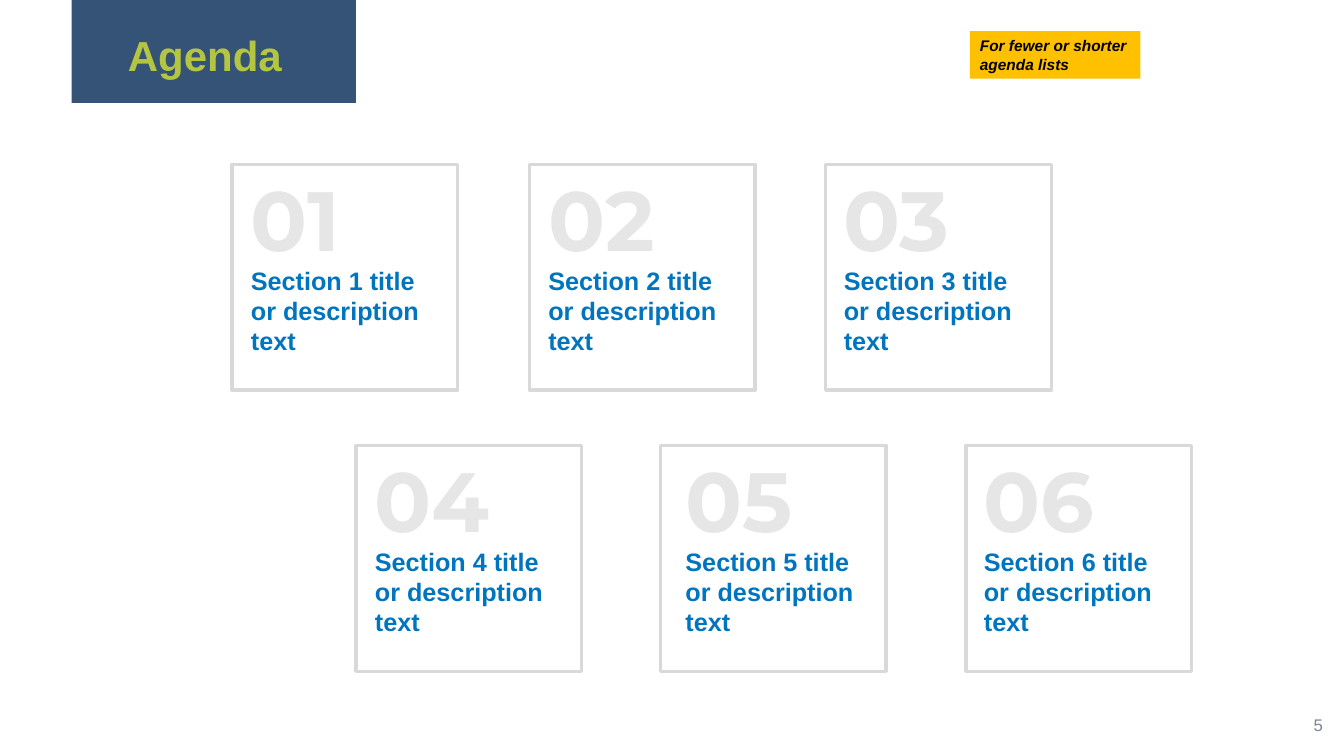
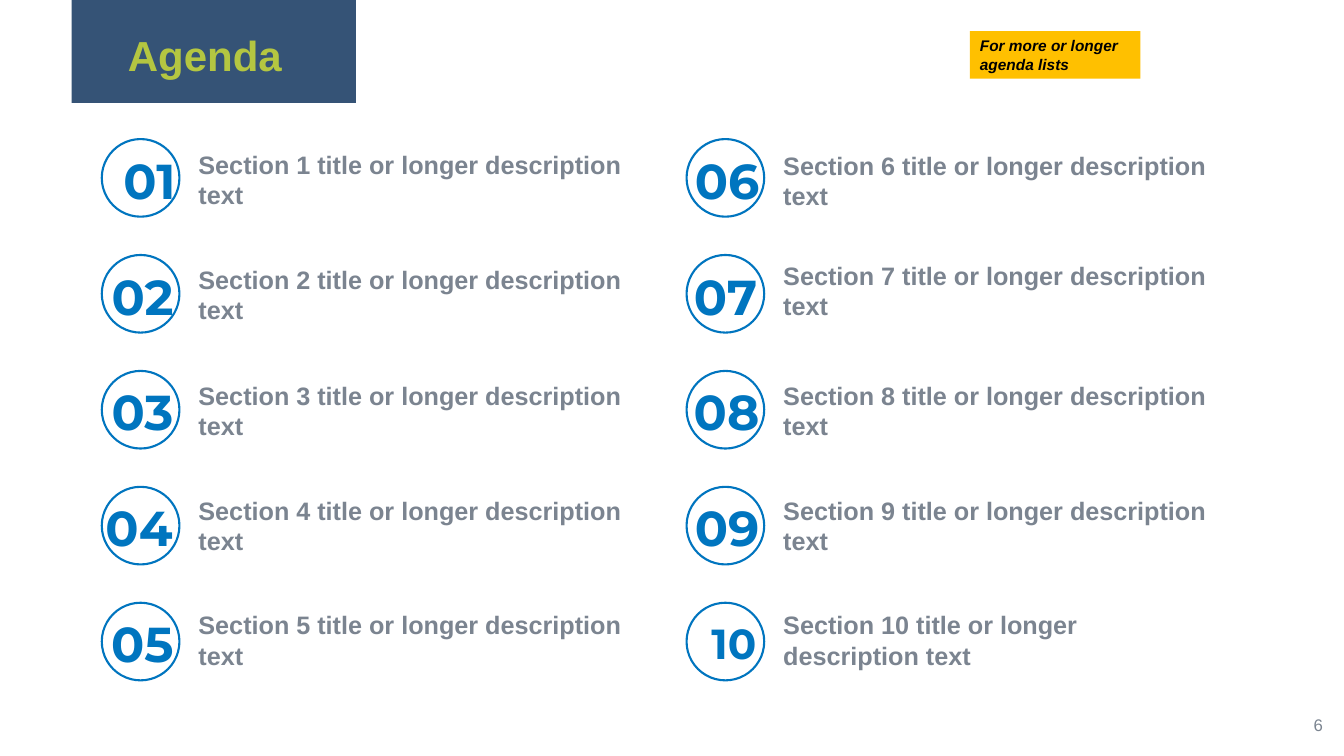
from dataclasses import dataclass

from pptx import Presentation
from pptx.dml.color import RGBColor
from pptx.enum import shapes, text
from pptx.util import Inches, Pt

COLORS = {
    "navy": "355376",
    "lime": "B4C641",
    "amber": "FFC000",
    "blue": "0075BF",
    "slate": "7B8490",
    "frame": "D9D9D9",
    "pale": "E7E6E6",
    "white": "FFFFFF",
    "black": "000000",
}
LEFT, RIGHT = text.PP_ALIGN.LEFT, text.PP_ALIGN.RIGHT
RECT, OVAL = shapes.MSO_SHAPE.RECTANGLE, shapes.MSO_SHAPE.OVAL


@dataclass
class Box:
    left: float
    top: float
    width: float
    height: float

    def place(self) -> tuple:
        return tuple(Inches(v) for v in (self.left, self.top, self.width, self.height))


@dataclass
class Style:
    size: int
    color: str
    font: str = "Arial"
    bold: bool = True
    italic: bool = False
    align: int = LEFT


@dataclass
class Card:
    num: int
    left: float
    top: float
    inset: float


@dataclass
class Topic:
    num: int
    edge: float  # right edge of the number, from the left of its circle
    top: float  # top of the description
    size: int = 35


TITLE = Style(30, "lime")
NOTE = Style(11, "black", italic=True)
PAGE = Style(12, "slate", bold=False, align=RIGHT)
CARD_NUM = Style(60, "pale", "Montserrat")
CARD_TEXT = Style(18, "blue")
TOPIC_TEXT = Style(18, "slate")

CARDS = [
    Card(1, 2.3, 1.63, 0.09), Card(2, 5.25, 1.63, 0.09), Card(3, 8.19, 1.63, 0.08),
    Card(4, 3.53, 4.42, 0.09), Card(5, 6.55, 4.42, 0.15), Card(6, 9.58, 4.42, 0.08),
]
TOPICS = [
    Topic(1, 0.83, 1.43), Topic(2, 0.81, 2.57), Topic(3, 0.81, 3.72),
    Topic(4, 0.8, 4.86), Topic(5, 0.81, 6), Topic(6, 0.82, 1.44),
    Topic(7, 0.8, 2.53), Topic(8, 0.82, 3.72), Topic(9, 0.82, 4.86),
    Topic(10, 0.79, 6, 30),
]
ROWS = 5


def write(shape, words: str, style: Style, grow: bool = True) -> None:
    frame = shape.text_frame
    frame.text = words
    frame.word_wrap = True
    fit = text.MSO_AUTO_SIZE
    frame.auto_size = fit.SHAPE_TO_FIT_TEXT if grow else fit.NONE
    frame.vertical_anchor = text.MSO_ANCHOR.TOP if grow else text.MSO_ANCHOR.MIDDLE
    para = frame.paragraphs[0]
    para.alignment = style.align
    font = para.runs[0].font
    font.name, font.size = style.font, Pt(style.size)
    font.bold, font.italic = style.bold, style.italic
    font.color.rgb = RGBColor.from_string(COLORS[style.color])


def label(slide, box: Box, words: str, style: Style, grow: bool = True) -> None:
    write(slide.shapes.add_textbox(*box.place()), words, style, grow)


def draw(slide, kind, box: Box, fill: str = "", line: str = "", weight: float = 0):
    """Add a preset shape; an empty colour means no fill or no line."""
    shape = slide.shapes.add_shape(kind, *box.place())
    shape.shadow.inherit = False
    if fill:
        shape.fill.solid()
        shape.fill.fore_color.rgb = RGBColor.from_string(COLORS[fill])
    else:
        shape.fill.background()
    if line:
        shape.line.color.rgb = RGBColor.from_string(COLORS[line])
        shape.line.width = Pt(weight)
    else:
        shape.line.fill.background()
    return shape


def start(deck, note: str, page: int):
    """Add a blank slide with the title band, note and page number."""
    slide = deck.slides.add_slide(deck.slide_layouts[6])
    draw(slide, RECT, Box(0.71, 0, 2.82, 1.02), "navy")
    label(slide, Box(1.17, 0.24, 1.91, 0.61), "Agenda", TITLE)
    write(draw(slide, RECT, Box(9.62, 0.31, 1.69, 0.47), "amber"), note, NOTE)
    label(slide, Box(10.97, 6.99, 2.25, 0.4), str(page), PAGE, grow=False)
    return slide


def add_card(slide, card: Card) -> None:
    draw(slide, RECT, Box(card.left, card.top, 2.24, 2.24), line="frame", weight=2.5)
    left = card.left + card.inset
    label(slide, Box(left, card.top - 0.02, 1.54, 1.11), f"{card.num:02}", CARD_NUM)
    label(slide, Box(left, card.top + 0.95, 1.91, 1.01),
          f"Section {card.num} title or description text", CARD_TEXT)


def add_topic(slide, topic: Topic) -> None:
    col, row = divmod(topic.num - 1, ROWS)
    left, top = 1.01 + 5.8 * col, 1.38 + 1.15 * row
    draw(slide, OVAL, Box(left, top, 0.77, 0.77), "white", "blue", 1.5)
    style = Style(topic.size, "blue", "Montserrat", align=RIGHT)
    drop = 0.06 if topic.size == 35 else 0.1
    label(slide, Box(left + topic.edge - 1.04, top + drop, 1.04, 0.69),
          f"{topic.num:02}", style)
    label(slide, Box(left + 0.86, topic.top, 4.5, 0.71),
          f"Section {topic.num} title or longer description text", TOPIC_TEXT)


def main() -> None:
    deck = Presentation()
    deck.slide_width, deck.slide_height = Inches(13.33), Inches(7.5)
    short = start(deck, "For fewer or shorter agenda lists", 5)
    for card in CARDS:
        add_card(short, card)
    full = start(deck, "For more or longer agenda lists", 6)
    for topic in TOPICS:
        add_topic(full, topic)
    deck.save("out.pptx")


if __name__ == "__main__":
    main()
